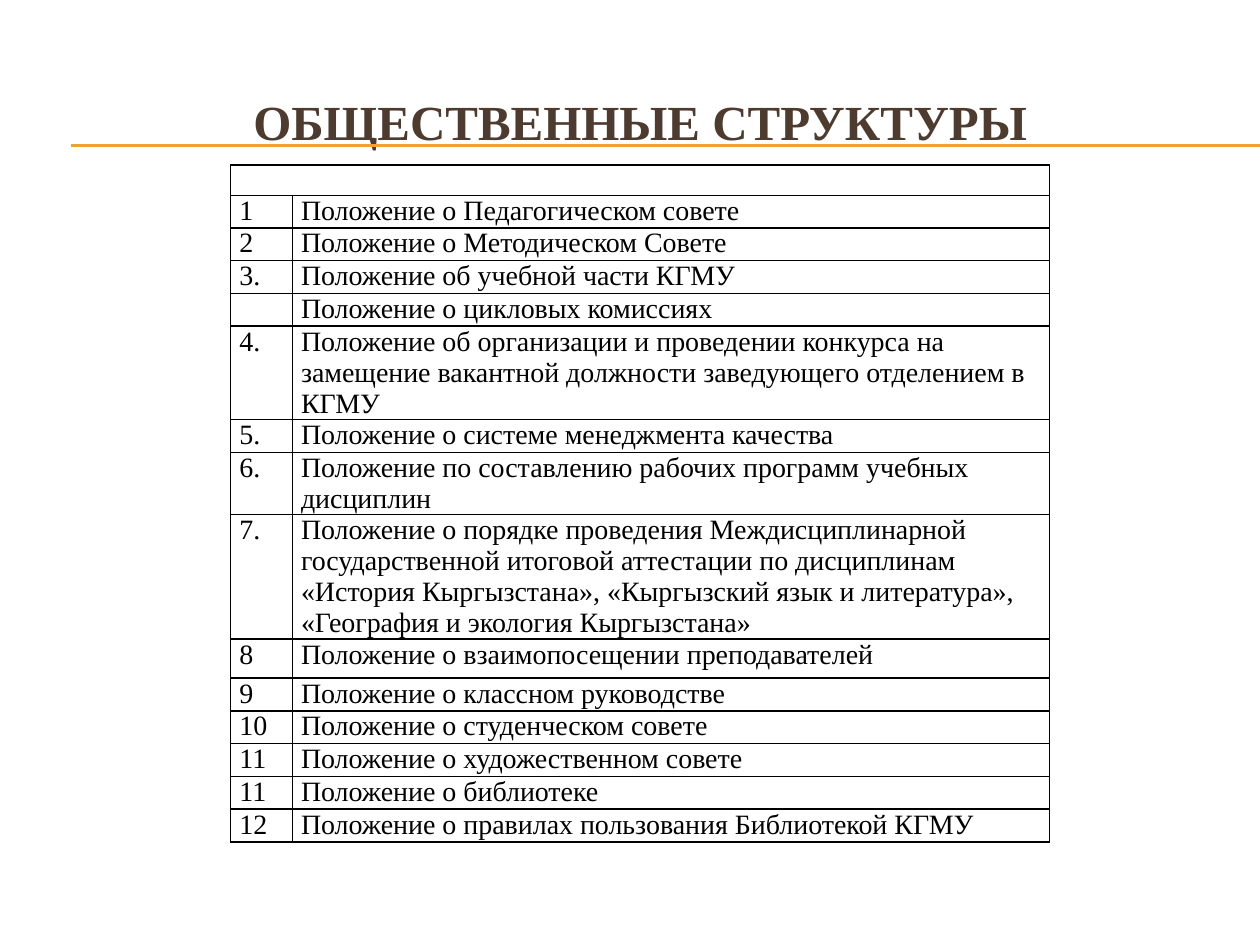
from lxml.etree import SubElement as Sub
from pptx import Presentation
from pptx.dml.color import RGBColor
from pptx.enum.shapes import MSO_CONNECTOR as Conn
from pptx.enum.text import MSO_ANCHOR as Anchor, PP_ALIGN as Align
from pptx.oxml.ns import qn
from pptx.util import Inches, Pt


def paint(code):
    return RGBColor.from_string(code)


def write(para, text, size, color, bold=False):
    run = para.add_run()
    run.text = text
    font = run.font
    font.name = "Times New Roman"
    font.size = Pt(size)
    font.bold = bold
    font.color.rgb = paint(color)


deck = Presentation()
deck.slide_width = Inches(10)
deck.slide_height = Inches(7.5)
slide = deck.slides.add_slide(deck.slide_layouts[5])

for y in (1.15, 1.16):
    rule = slide.shapes.add_connector(
        Conn.STRAIGHT, Inches(0.56), Inches(y), Inches(10), Inches(y))
    rule.line.color.rgb = paint("F0A22E")
    rule.line.width = Pt(0.75)
    Sub(rule._element.spPr, qn("a:effectLst"))

title = slide.shapes.title
title.left, title.top = Inches(0.33), Inches(0.5)
title.width, title.height = Inches(9.5), Inches(0.92)
frame = title.text_frame
frame.vertical_anchor = Anchor.MIDDLE
head = frame.paragraphs[0]
head.alignment = Align.CENTER
write(head, "ОБЩЕСТВЕННЫЕ СТРУКТУРЫ", 28, "4E3B30", True)

rows = [
    ("", "", 0.24),
    ("1", "Положение о Педагогическом совете", 0.26),
    ("2", "Положение о Методическом Совете", 0.26),
    ("3.", "Положение об учебной части КГМУ", 0.26),
    ("", "Положение о цикловых комиссиях", 0.26),
    ("4.", "Положение об организации и проведении конкурса на замещение "
     "вакантной должности заведующего отделением в КГМУ", 0.74),
    ("5.", "Положение о системе менеджмента качества", 0.26),
    ("6.", "Положение по составлению рабочих программ учебных дисциплин", 0.49),
    ("7.", "Положение о порядке проведения Междисциплинарной государственной "
     "итоговой аттестации по дисциплинам «История Кыргызстана», «Кыргызский "
     "язык и литература», «География и экология Кыргызстана»", 0.98),
    ("8", "Положение о взаимопосещении преподавателей", 0.31),
    ("9", "Положение о классном руководстве", 0.26),
    ("10", "Положение о студенческом совете", 0.26),
    ("11", "Положение о художественном совете", 0.26),
    ("11", "Положение о библиотеке", 0.26),
    ("12", "Положение о правилах пользования Библиотекой КГМУ", 0.26),
]
high = sum(row[2] for row in rows)
table = slide.shapes.add_table(
    len(rows), 2, Inches(1.83), Inches(1.31), Inches(6.5), Inches(high)).table
table.first_row = False
table.horz_banding = False
table.columns[0].width = Inches(0.49)
table.columns[1].width = Inches(6.01)

for r, (num, name, tall) in enumerate(rows):
    table.rows[r].height = Inches(tall)
    for c, text in enumerate((num, name)):
        cell = table.cell(r, c)
        cell.margin_left = cell.margin_right = Inches(0.07)
        cell.margin_top = cell.margin_bottom = 0
        props = cell._tc.get_or_add_tcPr()
        for side in ("lnL", "lnR", "lnT", "lnB"):
            edge = Sub(props, qn(f"a:{side}"), w=str(Pt(1)))
            Sub(Sub(edge, qn("a:solidFill")), qn("a:srgbClr"), val="000000")
        cell.fill.background()
        para = cell.text_frame.paragraphs[0]
        if text:
            write(para, text, 16, "000000")
        else:
            Sub(para._p, qn("a:endParaRPr"), sz="1200")
table.cell(0, 0).merge(table.cell(0, 1))

deck.save("out.pptx")
